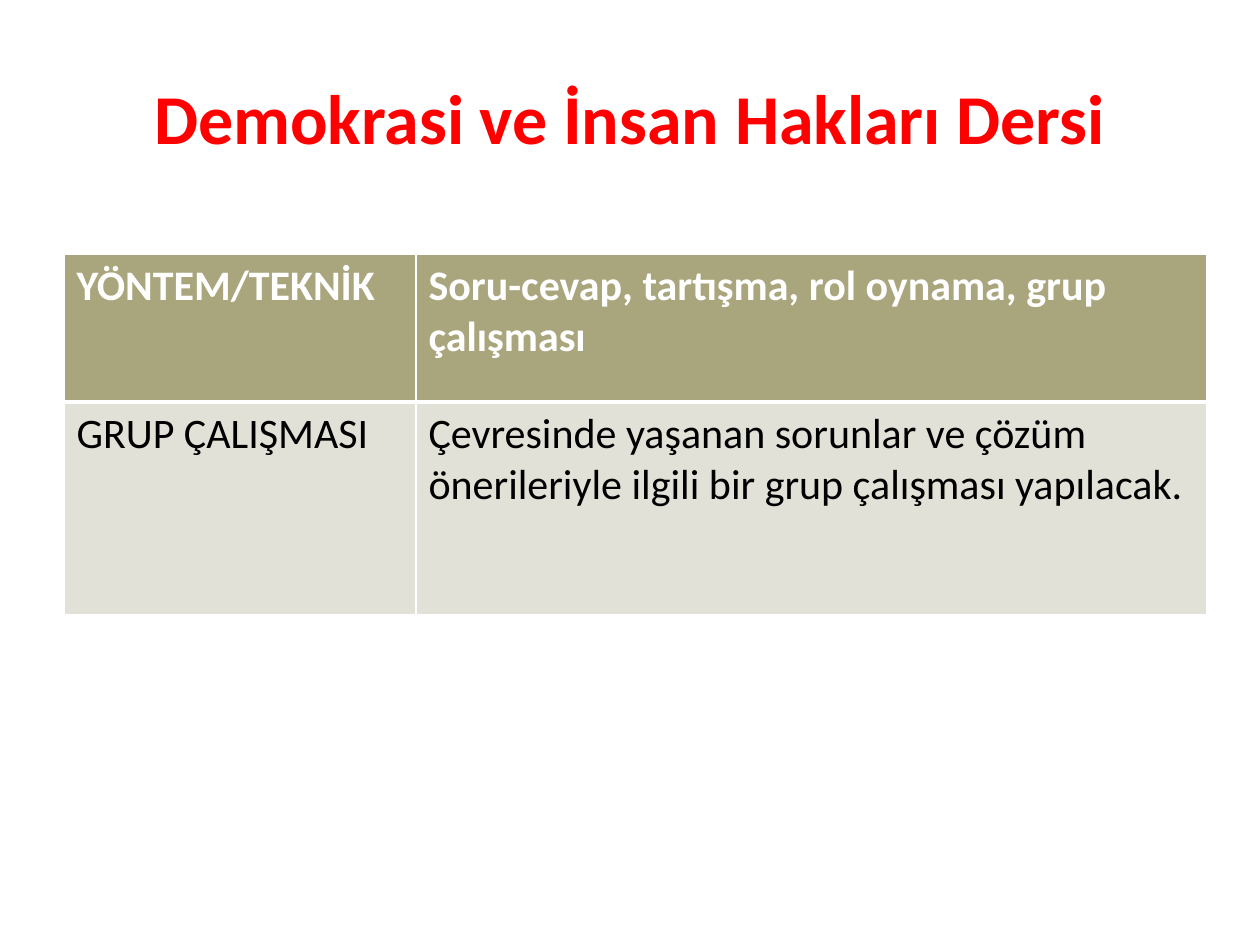
from lxml import etree
from pptx import Presentation
from pptx import util as u
from pptx.dml.color import RGBColor
from pptx.enum import text
from pptx.oxml.ns import qn

SCALE = 914400 / 126
WHITE = "FFFFFF"
ROWS = [
    (148, "A9A57C", WHITE, True,
     ["YÖNTEM/TEKNİK", "Soru-cevap, tartışma, rol oynama, grup çalışması"]),
    (213, "E2E1D7", "000000", False,
     ["GRUP ÇALIŞMASI",
      "Çevresinde yaşanan sorunlar ve çözüm önerileriyle ilgili bir grup çalışması yapılacak."]),
]


def px(size):
    """Turn pixels into EMU."""
    return u.Emu(round(size * SCALE))


def color(code):
    """Turn a hex string into a colour."""
    return RGBColor.from_string(code)


def style(para, size, code, bold):
    """Set the font of a paragraph."""
    font = para.font
    font.name, font.size, font.bold = "Calibri", u.Pt(size), bold
    font.color.rgb = color(code)


def border(cell, sides):
    """Draw white cell borders, given widths in points by side."""
    props = cell._tc.get_or_add_tcPr()
    for side, width in sides.items():
        line = etree.SubElement(props, qn(f"a:ln{side}"), w=str(u.Pt(width)))
        fill = etree.SubElement(line, qn("a:solidFill"))
        etree.SubElement(fill, qn("a:srgbClr"), val=WHITE)


def add_title(slide, left, top, width, height):
    """Place the red heading in its box."""
    frame = slide.shapes.add_textbox(*map(px, (left, top, width, height))).text_frame
    frame.word_wrap = True
    frame.vertical_anchor = text.MSO_ANCHOR.MIDDLE
    para = frame.paragraphs[0]
    para.text = "Demokrasi ve İnsan Hakları Dersi"
    para.alignment = text.PP_ALIGN.CENTER
    style(para, 40, "FF0000", True)


def add_grid(slide, left, top, widths):
    """Place the table of methods at a corner with the given column widths."""
    height = sum(row[0] for row in ROWS)
    box = map(px, (left, top, sum(widths), height))
    table = slide.shapes.add_table(len(ROWS), len(widths), *box).table
    for col, width in zip(table.columns, widths):
        col.width = px(width)
    for r, (tall, back, ink, bold, words) in enumerate(ROWS):
        table.rows[r].height = px(tall)
        for c, word in enumerate(words):
            cell = table.cell(r, c)
            cell.text = word
            style(cell.text_frame.paragraphs[0], 24, ink, bold)
            border(cell, {"L": 1, "R": 1, "T": 3 if r else 1, "B": 1 if r else 3})
            cell.fill.solid()
            cell.fill.fore_color.rgb = color(back)


def main():
    """Build and save the slide."""
    deck = Presentation()
    deck.slide_width, deck.slide_height = px(1260), px(945)
    slide = deck.slides.add_slide(deck.slide_layouts[6])
    add_title(slide, 63, 38, 1134, 158)
    add_grid(slide, 64, 254, [352, 791])
    deck.save("out.pptx")


if __name__ == "__main__":
    main()
